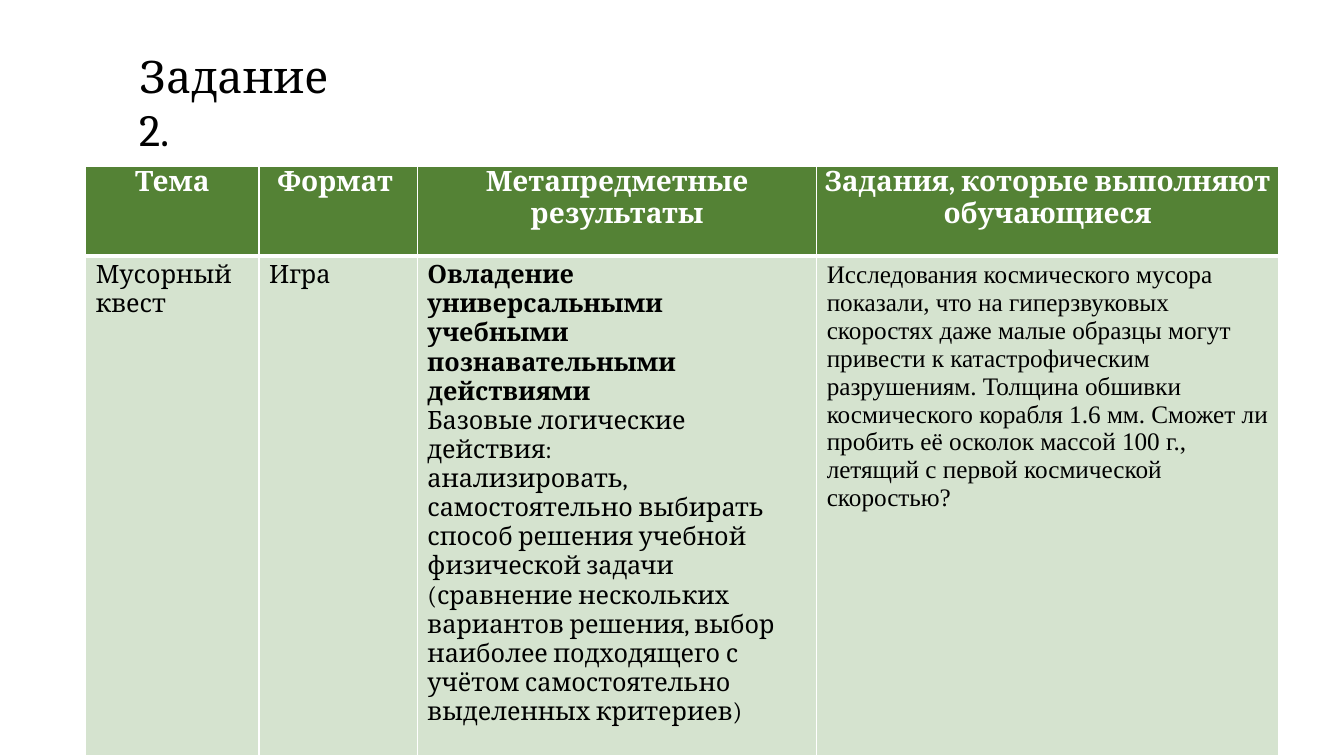
import dataclasses

import lxml.etree
import pptx
import pptx.dml.color
import pptx.enum.text
import pptx.oxml.ns
import pptx.util


@dataclasses.dataclass(frozen=True)
class Theme:
    ink: str = "000000"
    paper: str = "FFFFFF"
    head: str = "548235"
    body: str = "D5E3CF"
    serif: str = "Cambria"
    roman: str = "Times New Roman"
    large: int = 32
    medium: int = 20
    small: int = 18
    thin: int = 1
    thick: int = 3


class Deck:
    def __init__(self, theme):
        self.theme = theme
        self.show = pptx.Presentation()
        self.show.slide_width = pptx.util.Inches(13.33)
        self.show.slide_height = pptx.util.Inches(7.5)
        self.slide = self.show.slides.add_slide(self.show.slide_layouts[5])

    def wide(self, share):
        return int(self.show.slide_width * share / 100)

    def high(self, share):
        return int(self.show.slide_height * share / 100)

    def run(self, para, text, size, color, bold=False, font=None):
        run = para.add_run()
        run.text = text
        run.font.name = font or self.theme.serif
        run.font.size = pptx.util.Pt(size)
        run.font.bold = bold
        run.font.color.rgb = pptx.dml.color.RGBColor.from_string(color)

    def title(self, text, left, top, width, height):
        shape = self.slide.shapes.title
        shape.left, shape.top = self.wide(left), self.high(top)
        shape.width, shape.height = self.wide(width), self.high(height)
        frame = shape.text_frame
        frame.word_wrap = True
        frame.auto_size = pptx.enum.text.MSO_AUTO_SIZE.NONE
        frame.vertical_anchor = pptx.enum.text.MSO_ANCHOR.TOP
        para = frame.paragraphs[0]
        para.alignment = pptx.enum.text.PP_ALIGN.LEFT
        self.run(para, text, self.theme.large, self.theme.ink)

    def table(self, left, top, cols, rows):
        frame = self.slide.shapes.add_table(
            len(rows), len(cols), self.wide(left), self.high(top),
            self.wide(sum(cols)), self.high(sum(rows)))
        table = frame.table
        table.horz_banding = False
        for col, share in zip(table.columns, cols):
            col.width = self.wide(share)
        for row, share in zip(table.rows, rows):
            row.height = self.high(share)
        return table

    def paint(self, cell, color, edges):
        cell.fill.solid()
        cell.fill.fore_color.rgb = pptx.dml.color.RGBColor.from_string(color)
        props = cell._tc.get_or_add_tcPr()
        name = pptx.oxml.ns.qn
        for place, (side, width) in enumerate(zip("LRTB", edges)):
            line = lxml.etree.Element(name(f"a:ln{side}"), w=str(pptx.util.Pt(width)))
            fill = lxml.etree.SubElement(line, name("a:solidFill"))
            lxml.etree.SubElement(fill, name("a:srgbClr"), val=self.theme.paper)
            props.insert(place, line)

    def header(self, cell, text):
        look = self.theme
        self.paint(cell, look.head, (look.thin, look.thin, look.thin, look.thick))
        cell.margin_left = cell.margin_right = pptx.util.Inches(0.07)
        cell.margin_top = cell.margin_bottom = 0
        para = cell.text_frame.paragraphs[0]
        para.alignment = pptx.enum.text.PP_ALIGN.CENTER
        self.run(para, text, look.medium, look.paper, True)

    def body(self, cell, paras, font=None):
        look = self.theme
        self.paint(cell, look.body, (look.thin, look.thin, look.thick, look.thin))
        frame = cell.text_frame
        for place, (text, bold, gap) in enumerate(paras):
            para = frame.add_paragraph() if place else frame.paragraphs[0]
            para.space_before = pptx.util.Pt(gap)
            self.run(para, text, look.small, look.ink, bold, font)


HEADS = ["Тема", "Формат ", "Метапредметные результаты",
         "Задания, которые выполняют обучающиеся"]
GOALS = [
    ("Овладение универсальными учебными познавательными действиями", True, 1),
    ("Базовые логические действия:", False, 0.1),
    ("анализировать, самостоятельно выбирать способ решения учебной физической "
     "задачи (сравнение нескольких вариантов решения, выбор наиболее подходящего "
     "с учётом самостоятельно выделенных критериев)", False, 0.1),
]
TASK = ("Исследования космического мусора показали, что на гиперзвуковых скоростях "
        "даже малые образцы могут привести к катастрофическим разрушениям. Толщина "
        "обшивки космического корабля 1.6 мм. Сможет ли пробить её осколок массой "
        "100 г., летящий с первой космической скоростью?")


def main():
    theme = Theme()
    deck = Deck(theme)
    deck.title("Задание 2.", 9.6, 5.73, 17.4, 15.5)
    table = deck.table(6.38, 22, [12.9, 11.78, 29.71, 34.36], [11.87, 66.13])
    for col, text in enumerate(HEADS):
        deck.header(table.cell(0, col), text)
    cells = [
        ([("Мусорный квест", False, 0)], theme.serif),
        ([("Игра", False, 0)], theme.serif),
        (GOALS, theme.serif),
        ([(TASK, False, 0)], theme.roman),
    ]
    for col, (paras, font) in enumerate(cells):
        deck.body(table.cell(1, col), paras, font)
    deck.show.save("out.pptx")


if __name__ == "__main__":
    main()
